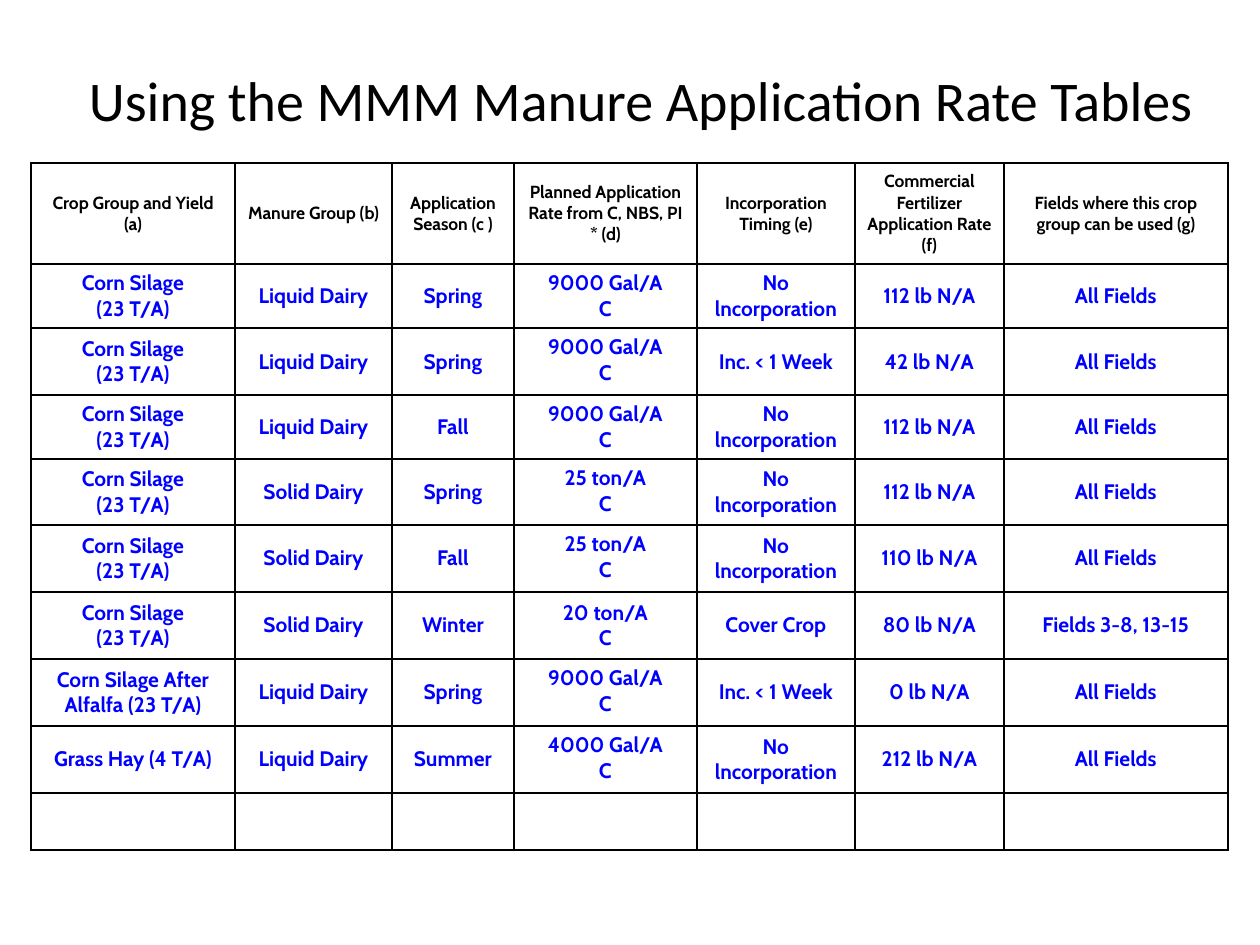
import pptx
import pptx.util
from lxml import etree
from pptx.dml.color import RGBColor
from pptx.enum.text import MSO_ANCHOR, PP_ALIGN
from pptx.oxml.ns import qn

PX = 914400 // 126
BLACK = RGBColor(0, 0, 0)
BLUE = RGBColor(0, 0, 255)
WHITE = RGBColor(255, 255, 255)


def add_borders(cell):
    """Draw a 1 pt black line on each side; lines must precede the fill."""
    properties = cell._tc.get_or_add_tcPr()
    for index, side in enumerate(("a:lnL", "a:lnR", "a:lnT", "a:lnB")):
        line = etree.Element(qn(side), w=str(pptx.util.Pt(1)))
        fill = etree.SubElement(line, qn("a:solidFill"))
        etree.SubElement(fill, qn("a:srgbClr"), val=str(BLACK))
        properties.insert(index, line)


deck = pptx.Presentation()
deck.slide_width = pptx.util.Inches(10)
deck.slide_height = pptx.util.Inches(7.5)
slide = deck.slides.add_slide(deck.slide_layouts[6])

# Title
title = slide.shapes.add_textbox(89 * PX, 49 * PX, 1123 * PX, 101 * PX).text_frame
title.word_wrap = True
title.margin_left = title.margin_right = 0
title.vertical_anchor = MSO_ANCHOR.MIDDLE
title.text = "Using the MMM Manure Application Rate Tables"
title_font = title.paragraphs[0].runs[0].font
title_font.name = "Calibri"
title_font.size = pptx.util.Pt(32)
title_font.color.rgb = BLACK

# Table content; the last row stays empty
headings = [
    "Crop Group and Yield (a)", "Manure Group (b)", "Application Season (c )",
    "Planned Application Rate from C, NBS, PI * (d)", "Incorporation Timing (e)",
    "Commercial Fertilizer Application Rate (f)",
    "Fields where this crop group can be used (g)",
]
silage = "Corn Silage\n(23 T/A)"
no_inc = "No lncorporation"
plans = [
    (silage, "Liquid Dairy", "Spring", "9000 Gal/A\nC", no_inc, "112 lb N/A", "All Fields"),
    (silage, "Liquid Dairy", "Spring", "9000 Gal/A\nC", "Inc. < 1 Week", "42 lb N/A", "All Fields"),
    (silage, "Liquid Dairy", "Fall", "9000 Gal/A\nC", no_inc, "112 lb N/A", "All Fields"),
    (silage, "Solid Dairy", "Spring", "25 ton/A\nC", no_inc, "112 lb N/A", "All Fields"),
    (silage, "Solid Dairy", "Fall", "25 ton/A\nC", no_inc, "110 lb N/A", "All Fields"),
    (silage, "Solid Dairy", "Winter", "20 ton/A\nC", "Cover Crop", "80 lb N/A", "Fields 3-8, 13-15"),
    ("Corn Silage After Alfalfa (23 T/A)", "Liquid Dairy", "Spring", "9000 Gal/A\nC",
     "Inc. < 1 Week", "0 lb N/A", "All Fields"),
    ("Grass Hay (4 T/A)", "Liquid Dairy", "Summer", "4000 Gal/A\nC", no_inc, "212 lb N/A", "All Fields"),
]
rows = [headings, *plans, [""] * len(headings)]
column_widths = [204, 157, 122, 183, 158, 149, 224]
row_heights = [101, 64, 67, 64, 66, 67, 67, 67, 67, 57]
RATE_COLUMN = 3
TOP_RATE_ROWS = (2, 3, 4, 5, 7, 8)

# Table grid
rates = slide.shapes.add_table(
    len(rows), len(headings), 31 * PX, 163 * PX,
    sum(column_widths) * PX, sum(row_heights) * PX).table
rates.first_row = rates.horz_banding = False
for column, width in zip(rates.columns, column_widths):
    column.width = width * PX
for row, height in zip(rates.rows, row_heights):
    row.height = height * PX

# Cells
for r, texts in enumerate(rows):
    for c, text in enumerate(texts):
        cell = rates.cell(r, c)
        cell.fill.solid()
        cell.fill.fore_color.rgb = WHITE
        add_borders(cell)
        top = c == RATE_COLUMN and r in TOP_RATE_ROWS
        cell.vertical_anchor = MSO_ANCHOR.TOP if top else MSO_ANCHOR.MIDDLE
        cell.text_frame.text = text
        for paragraph in cell.text_frame.paragraphs:
            paragraph.alignment = PP_ALIGN.CENTER
            for run in paragraph.runs:
                run.font.name = "Cabin"
                run.font.bold = True
                run.font.size = pptx.util.Pt(10 if r == 0 else 12)
                run.font.color.rgb = BLACK if r == 0 else BLUE

deck.save("out.pptx")
